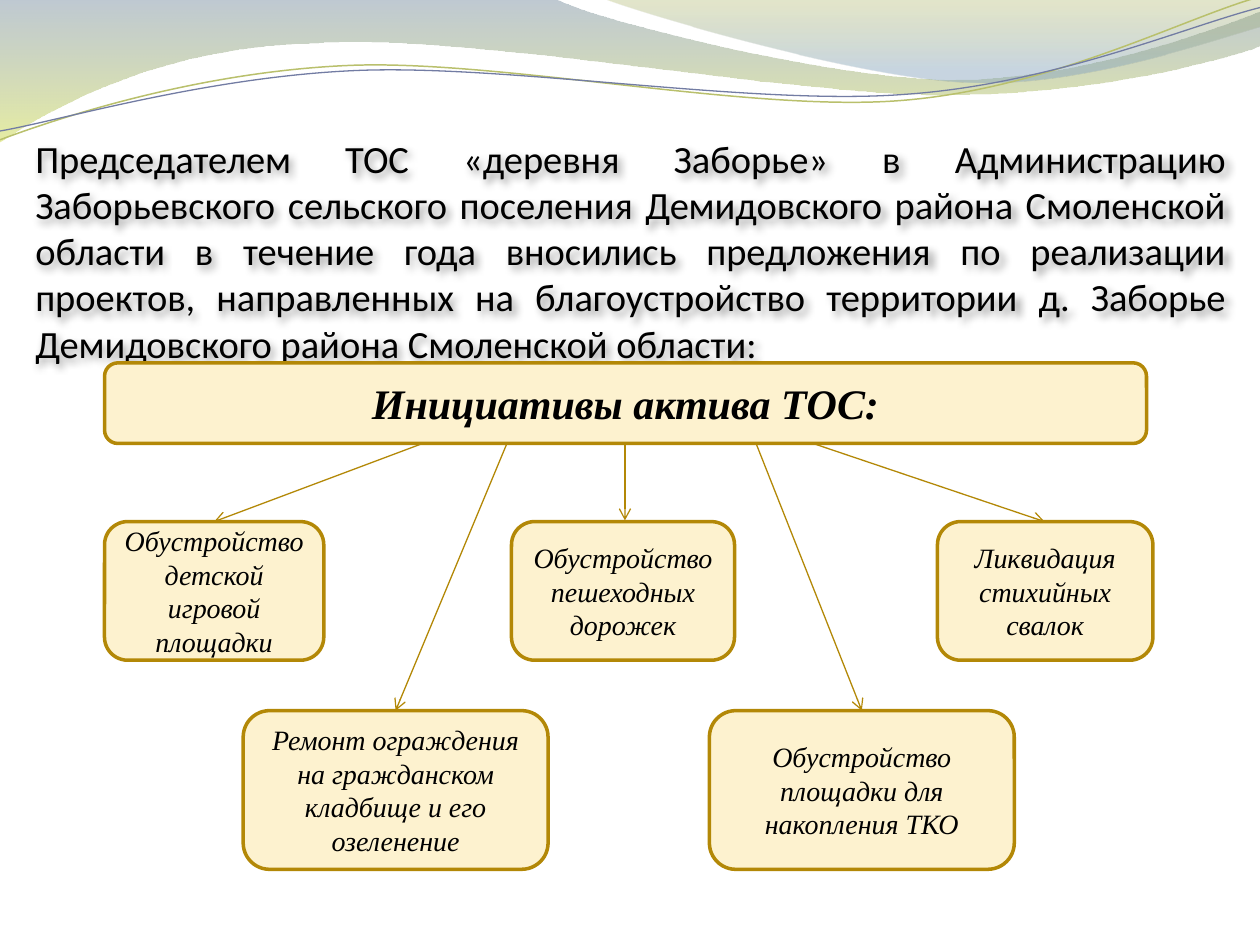
from lxml import etree
from pptx import Presentation
from pptx.dml.color import RGBColor
from pptx.enum import shapes as kinds, text as styles
from pptx.oxml import ns
from pptx.util import Inches, Pt

GOLD, CREAM, BLACK = "B38807", "FDF2CF", "000000"


def color(value):
    return RGBColor.from_string(value)


def add_wave(segments, closed):
    """Draw an outline from points (x, y) and cubic segments (x1, y1, x2, y2, x, y)."""
    points = [(Inches(x), Inches(y)) for segment in segments
              for x, y in zip(segment[::2], segment[1::2])]
    builder = slide.shapes.build_freeform(*points[0])
    builder.add_line_segments(points[1:], close=closed)
    wave = builder.convert_to_shape()
    wave.shadow.inherit = False
    # Join the three lines of each cubic segment into one curve
    lines = iter(list(wave._element.spPr.iter(ns.qn("a:lnTo"))))
    for segment in segments[1:]:
        curve = next(lines)
        if len(segment) == 6:
            curve.tag = ns.qn("a:cubicBezTo")
            for line in (next(lines), next(lines)):
                curve.append(line[0])
                line.getparent().remove(line)
    return wave


prs = Presentation()
prs.slide_width, prs.slide_height = Inches(10), Inches(7.5)
slide = prs.slides.add_slide(prs.slide_layouts[6])

# Header bands: outline, then gradient stops (position, colour, opacity %)
bands = [
    ([(0, 0), (4.4, -0.01), (4.76, 0.17, 6.64, 0.63, 7.58, 0.63),
      (8.53, 0.63, 9.58, 0.26, 10, 0.09), (10.01, 0.36),
      (9.83, 0.44, 8.7, 0.76, 7.46, 0.75), (6.22, 0.75, 3.82, 0.28, 2.57, 0.34),
      (1.29, 0.36, 0.46, 0.83, -0.01, 1.13)],
     [(0, "72889B", 45), (1, "D3DE57", 55)]),
    ([(4.79, -0.01), (5.09, 0.11, 6.82, 0.62, 7.69, 0.65),
      (8.56, 0.69, 9.61, 0.32, 10, 0.21), (10, 0)],
     [(0, "A4AC50", 30), (0.8, "84A3BD", 45)]),
]
for outline, stops in bands:
    band = add_wave(outline, True)
    band.line.fill.background()
    band.fill.gradient()
    band.fill.gradient_angle = 270
    for stop, (position, tint, _) in zip(band.fill.gradient_stops, stops):
        stop.position = position
        stop.color.rgb = color(tint)
    tints = band._element.spPr.iter(ns.qn("a:srgbClr"))
    for tint, (_, _, opacity) in zip(tints, stops):
        etree.SubElement(tint, ns.qn("a:alpha"), val=str(opacity * 1000))

strands = [
    ([(0, 1.11), (0.48, 0.93, 1.58, 0.57, 2.77, 0.52),
      (3.95, 0.47, 5.93, 0.89, 7.13, 0.8), (8.33, 0.71, 9.38, 0.15, 9.98, -0.02)],
     "B9C06C", 0.85),
    ([(0, 1.04), (0.47, 0.96, 1.64, 0.61, 2.83, 0.56),
      (4.03, 0.51, 5.97, 0.84, 7.17, 0.75), (8.36, 0.67, 9.41, 0.21, 10, 0.06)],
     "727CA3", 0.75),
]
for outline, tint, width in strands:
    strand = add_wave(outline, False)
    strand.fill.background()
    strand.line.color.rgb = color(tint)
    strand.line.width = Pt(width)

# Introduction with a soft shadow
intro = slide.shapes.add_textbox(Inches(0.28), Inches(1.07), Inches(9.45), Inches(1.5))
frame = intro.text_frame
frame.word_wrap = True
frame.margin_left = frame.margin_top = frame.margin_right = frame.margin_bottom = 0
paragraph = frame.paragraphs[0]
paragraph.alignment = styles.PP_ALIGN.JUSTIFY
run = paragraph.add_run()
run.text = ("Председателем ТОС «деревня Заборье» в Администрацию Заборьевского сельского "
            "поселения Демидовского района Смоленской области в течение года вносились "
            "предложения по реализации проектов, направленных на благоустройство "
            "территории д. Заборье Демидовского района Смоленской области:")
run.font.size, run.font.name = Pt(22), "Calibri"
run.font.color.rgb = color(BLACK)
effects = etree.SubElement(intro._element.spPr, ns.qn("a:effectLst"))
shadow = etree.SubElement(effects, ns.qn("a:outerShdw"), blurRad="50800", dist="38100",
                          dir="2700000", algn="tl", rotWithShape="0")
shade = etree.SubElement(shadow, ns.qn("a:srgbClr"), val=BLACK)
etree.SubElement(shade, ns.qn("a:alpha"), val="40000")

# Arrows from the heading to each initiative
arrows = [(3.78, 3.36, 1.7, 4.14), (4.96, 3.25, 4.96, 4.13), (5.98, 3.36, 8.29, 4.14),
          (4.09, 3.36, 3.14, 5.64), (5.89, 3.24, 6.84, 5.64)]
for ends in arrows:
    arrow = slide.shapes.add_connector(kinds.MSO_CONNECTOR.STRAIGHT, *map(Inches, ends))
    arrow.line.color.rgb = color(GOLD)
    arrow.line.width = Pt(0.75)
    etree.SubElement(arrow.line._get_or_add_ln(), ns.qn("a:tailEnd"), type="arrow")
    etree.SubElement(arrow._element.spPr, ns.qn("a:effectLst"))

# Initiatives and heading: left, width, (top, height), text size, bold, wording
UPPER, LOWER = (4.14, 1.1), (5.64, 1.26)
boxes = [
    (0.83, 1.74, UPPER, 16, False, "Обустройство детской игровой площадки"),
    (4.06, 1.77, UPPER, 16, False, "Обустройство пешеходных дорожек"),
    (7.44, 1.71, UPPER, 16, False, "Ликвидация стихийных свалок"),
    (1.93, 2.42, LOWER, 16, False, "Ремонт ограждения на гражданском кладбище и его озеленение"),
    (5.63, 2.42, LOWER, 16, False, "Обустройство площадки для накопления ТКО"),
    (0.83, 8.27, (2.88, 0.64), 24, True, "Инициативы актива ТОС:"),
]
for left, width, (top, height), size, bold, wording in boxes:
    box = slide.shapes.add_shape(kinds.MSO_SHAPE.ROUNDED_RECTANGLE,
                                 *map(Inches, (left, top, width, height)))
    box.shadow.inherit = False
    box.fill.solid()
    box.fill.fore_color.rgb = color(CREAM)
    box.line.color.rgb = color(GOLD)
    box.line.width = Pt(2)
    box.text_frame.word_wrap = True
    box.text_frame.vertical_anchor = styles.MSO_ANCHOR.MIDDLE
    paragraph = box.text_frame.paragraphs[0]
    paragraph.alignment = styles.PP_ALIGN.CENTER
    run = paragraph.add_run()
    run.text = wording
    run.font.size, run.font.name = Pt(size), "Times New Roman"
    run.font.bold, run.font.italic = bold, True
    run.font.color.rgb = color(BLACK)

prs.save("out.pptx")
